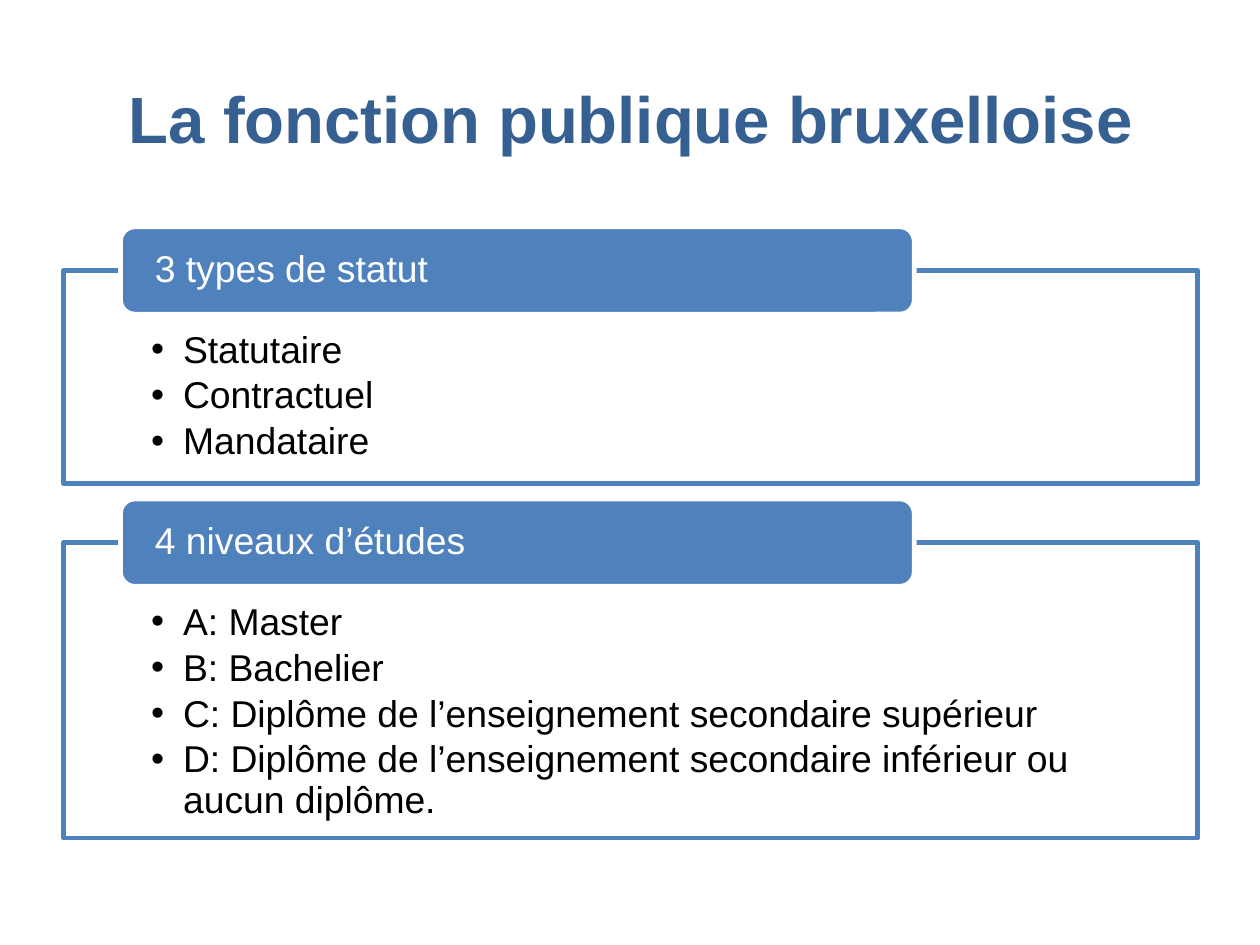
from lxml import etree
from pptx import Presentation
from pptx.dml.color import RGBColor
from pptx.enum import shapes, text
from pptx.oxml.ns import qn
from pptx.util import Inches, Pt

NAVY = RGBColor(0x37, 0x60, 0x92)
BLUE = RGBColor(0x4F, 0x81, 0xBD)
WHITE = RGBColor(0xFF, 0xFF, 0xFF)
BLACK = RGBColor(0, 0, 0)

PAGE = 7.5
LEFT, WIDTH = 0.38, 6.75
TAB_H, RISE = 0.52, 0.26
PANELS = [
    (1.61, 1.27, "3 types de statut", ["Statutaire", "Contractuel", "Mandataire"]),
    (3.23, 1.76, "4 niveaux d’études", [
        "A: Master",
        "B: Bachelier",
        "C: Diplôme de l’enseignement secondaire supérieur",
        "D: Diplôme de l’enseignement secondaire inférieur ou aucun diplôme.",
    ]),
]


def assign(item, form):
    for key, val in form.items():
        setattr(item, key, val)


def style(para, size, color, bold=False):
    assign(para.font, {"name": "Arial", "size": Pt(size), "bold": bold})
    para.font.color.rgb = color


def inset(frame, side, top, bottom, anchor):
    assign(frame, {
        "word_wrap": True, "vertical_anchor": anchor,
        "margin_left": Inches(side), "margin_right": Inches(side),
        "margin_top": Inches(top), "margin_bottom": Inches(bottom),
    })


def block(slide, kind, box, fill, line):
    shape = slide.shapes.add_shape(kind, *map(Inches, box))
    shape.shadow.inherit = False
    shape.fill.solid()
    shape.fill.fore_color.rgb = fill
    shape.line.color.rgb = line
    shape.line.width = Pt(2)
    return shape


def write(frame, lines, color, after, dots=False):
    for i, words in enumerate(lines):
        para = frame.paragraphs[0] if i == 0 else frame.add_paragraph()
        para.text = words
        assign(para, {"alignment": text.PP_ALIGN.LEFT, "line_spacing": 0.9,
                      "space_after": Pt(after)})
        if dots:
            props = para._p.get_or_add_pPr()
            props.set("marL", str(Inches(0.19)))
            props.set("indent", str(Inches(-0.19)))
            etree.SubElement(props, qn("a:buFont")).set("typeface", "Arial")
            etree.SubElement(props, qn("a:buChar")).set("char", "•")
        style(para, 16, color)


def title(slide, box):
    frame = slide.shapes.add_textbox(*map(Inches, box)).text_frame
    inset(frame, 0.1, 0.05, 0.05, text.MSO_ANCHOR.MIDDLE)
    para = frame.paragraphs[0]
    para.text = "La fonction publique bruxelloise"
    para.alignment = text.PP_ALIGN.CENTER
    style(para, 28, NAVY, True)


def panel(slide, box, head, items):
    left, top, width, _ = box
    kinds = shapes.MSO_SHAPE
    body = block(slide, kinds.RECTANGLE, box, WHITE, BLUE).text_frame
    inset(body, 0.52, 0.36, 0.12, text.MSO_ANCHOR.TOP)
    write(body, items, BLACK, 2.4, True)
    spot = (left + width * 0.05, top - RISE, width * 0.7, TAB_H)
    tab = block(slide, kinds.ROUNDED_RECTANGLE, spot, BLUE, WHITE).text_frame
    inset(tab, 0.18, 0, 0, text.MSO_ANCHOR.MIDDLE)
    write(tab, [head], WHITE, 0)


def main():
    deck = Presentation()
    assign(deck, {"slide_width": Inches(PAGE), "slide_height": Inches(PAGE * 3 / 4)})
    slide = deck.slides.add_slide(deck.slide_layouts[6])
    title(slide, (LEFT, 0.23, WIDTH, 0.94))
    for top, height, head, items in PANELS:
        panel(slide, (LEFT, top, WIDTH, height), head, items)
    deck.save("out.pptx")


if __name__ == "__main__":
    main()
